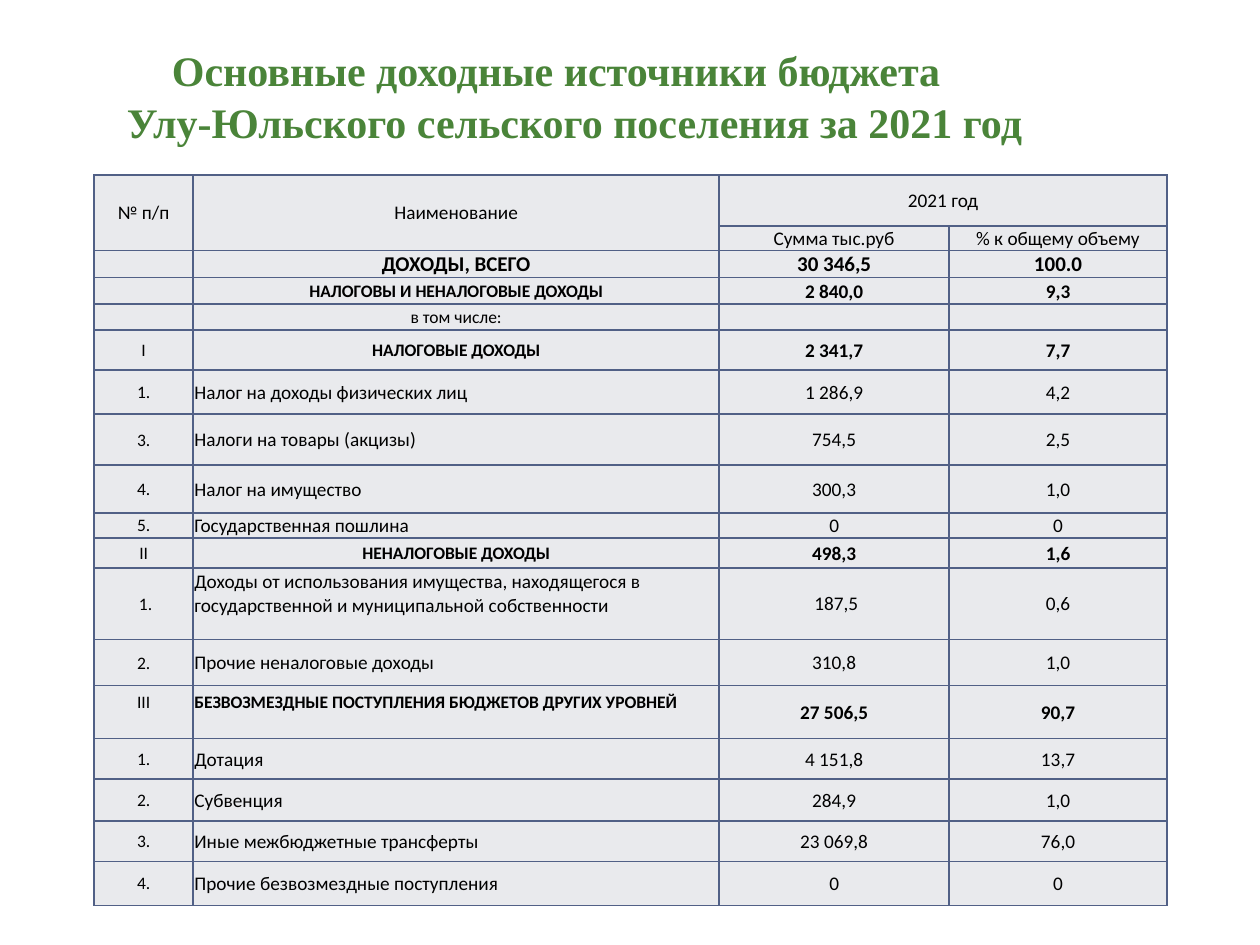
from lxml.etree import SubElement
from pptx import Presentation
from pptx.dml.color import RGBColor
from pptx.enum.text import MSO_ANCHOR as Anchor, PP_ALIGN as Align
from pptx.oxml.ns import qn
from pptx.util import Pt

GREEN = RGBColor(0x4A, 0x84, 0x39)
BLACK = RGBColor(0, 0, 0)
PALE = RGBColor(0xE9, 0xEA, 0xED)
BORDER = RGBColor(0x51, 0x60, 0x86)

COLUMNS = [56.6, 300.6, 131.4, 124.5]
HEADER = [
    (29.1, ["№ п/п", "Наименование", "2021 год", ""]),
    (13.7, ["", "", "Сумма тыс.руб", "% к общему объему"]),
]
ROWS = [
    (15.7, "total", ["", "ДОХОДЫ, ВСЕГО", "30 346,5", "100.0"]),
    (15.1, "group", ["", "НАЛОГОВЫ И НЕНАЛОГОВЫЕ ДОХОДЫ", "2 840,0", "9,3"]),
    (14.9, "note", ["", "в том числе:", "", ""]),
    (22.9, "group", ["I", "НАЛОГОВЫЕ ДОХОДЫ", "2 341,7", "7,7"]),
    (25.1, "item", ["1.", "Налог на доходы физических лиц", "1 286,9", "4,2"]),
    (29.1, "item", ["3.", "Налоги на товары (акцизы)", "754,5", "2,5"]),
    (27.4, "item", ["4.", "Налог на имущество", "300,3", "1,0"]),
    (14.3, "item", ["5.", "Государственная пошлина", "0", "0"]),
    (17.1, "group", ["II", "НЕНАЛОГОВЫЕ ДОХОДЫ", "498,3", "1,6"]),
    (41.1, "item", [" 1.", "Доходы от использования имущества, находящегося в "
                    "государственной и муниципальной собственности", " 187,5", "0,6"]),
    (26.3, "item", ["2.", "Прочие неналоговые доходы", "310,8", "1,0"]),
    (30.3, "group", ["III", "БЕЗВОЗМЕЗДНЫЕ ПОСТУПЛЕНИЯ БЮДЖЕТОВ ДРУГИХ УРОВНЕЙ",
                     "27 506,5", "90,7"]),
    (23.1, "item", ["1.", "Дотация", "4 151,8", "13,7"]),
    (24, "item", ["2.", "Субвенция", "284,9", "1,0"]),
    (23.1, "item", ["3.", "Иные межбюджетные трансферты", "23 069,8", "76,0"]),
    (25.1, "item", ["4.", "Прочие безвозмездные поступления", "0", "0"]),
]
NAME_SIZES = {"total": 12, "group": 10, "note": 10, "item": 11}
RAISED = {(11, 1), (13, 0), (13, 1)}
LEFT_GROUP = "III"


class BudgetPage:
    title_font = "Times New Roman"
    table_font = "Calibri"

    def __init__(self, deck):
        self.page = deck.slides.add_slide(deck.slide_layouts[6])

    def style(self, span, font, size, color, bold):
        span.font.name = font
        span.font.size = Pt(size)
        span.font.color.rgb = color
        span.font.bold = bold

    def title(self, left, top, width, height, text, first_indent):
        box = self.page.shapes.add_textbox(Pt(left), Pt(top), Pt(width), Pt(height))
        box.text_frame.word_wrap = True
        box.text_frame.text = text
        para = box.text_frame.paragraphs[0]
        para.alignment = Align.LEFT
        para.line_spacing = 1.03
        properties = para._p.get_or_add_pPr()
        properties.set("marL", "0")
        properties.set("indent", str(Pt(first_indent)))
        for span in para.runs:
            self.style(span, self.title_font, 24, GREEN, True)

    def table(self, left, top, columns, heights):
        frame = self.page.shapes.add_table(
            len(heights), len(columns), Pt(left), Pt(top), Pt(sum(columns)), Pt(sum(heights)))
        table = frame.table
        table.first_row = table.horz_banding = False
        for column, width in zip(table.columns, columns):
            column.width = Pt(width)
        for row, height in zip(table.rows, heights):
            row.height = Pt(height)
        return table

    def borders(self, cell):
        properties = cell._tc.get_or_add_tcPr()
        for side in ("a:lnL", "a:lnR", "a:lnT", "a:lnB"):
            line = SubElement(properties, qn(side), w=str(Pt(1)))
            fill = SubElement(line, qn("a:solidFill"))
            SubElement(fill, qn("a:srgbClr"), val=str(BORDER))

    def cell(self, cell, text, size=11, bold=False, align=Align.CENTER, raised=False):
        self.borders(cell)
        cell.fill.solid()
        cell.fill.fore_color.rgb = PALE
        cell.vertical_anchor = Anchor.MIDDLE
        cell.margin_left = cell.margin_right = cell.margin_top = Pt(0.7)
        cell.margin_bottom = Pt(12 if raised else 0)
        cell.text_frame.text = text
        para = cell.text_frame.paragraphs[0]
        para.alignment = align
        for span in para.runs:
            self.style(span, self.table_font, size, BLACK, bold)
        if not text:
            SubElement(para._p, qn("a:endParaRPr"), sz=str(size * 100))


def cell_style(kind, number, column):
    bold = kind in ("total", "group") and column > 0
    if column == 0:
        size = 10
    elif column == 1 or kind == "total":
        size = NAME_SIZES[kind]
    else:
        size = 11
    to_left = column == 1 and (kind == "item" or number == LEFT_GROUP)
    return size, bold, Align.LEFT if to_left else Align.CENTER


def main():
    deck = Presentation()
    deck.slide_width, deck.slide_height = Pt(720), Pt(540)
    page = BudgetPage(deck)
    page.title(65.5, 21, 590, 66,
               "Основные доходные источники бюджета\v"
               "Улу-Юльского сельского поселения за 2021 год", 25.7)

    heights = [row[0] for row in HEADER + ROWS]
    table = page.table(53.8, 100, COLUMNS, heights)
    for r, (_, texts) in enumerate(HEADER):
        for c, text in enumerate(texts):
            page.cell(table.cell(r, c), text)
    for r, (_, kind, texts) in enumerate(ROWS, len(HEADER)):
        for c, text in enumerate(texts):
            size, bold, align = cell_style(kind, texts[0], c)
            page.cell(table.cell(r, c), text, size, bold, align, (r, c) in RAISED)
    for c in (0, 1):
        table.cell(0, c).merge(table.cell(1, c))
    table.cell(0, 2).merge(table.cell(0, 3))
    deck.save("out.pptx")


if __name__ == "__main__":
    main()
